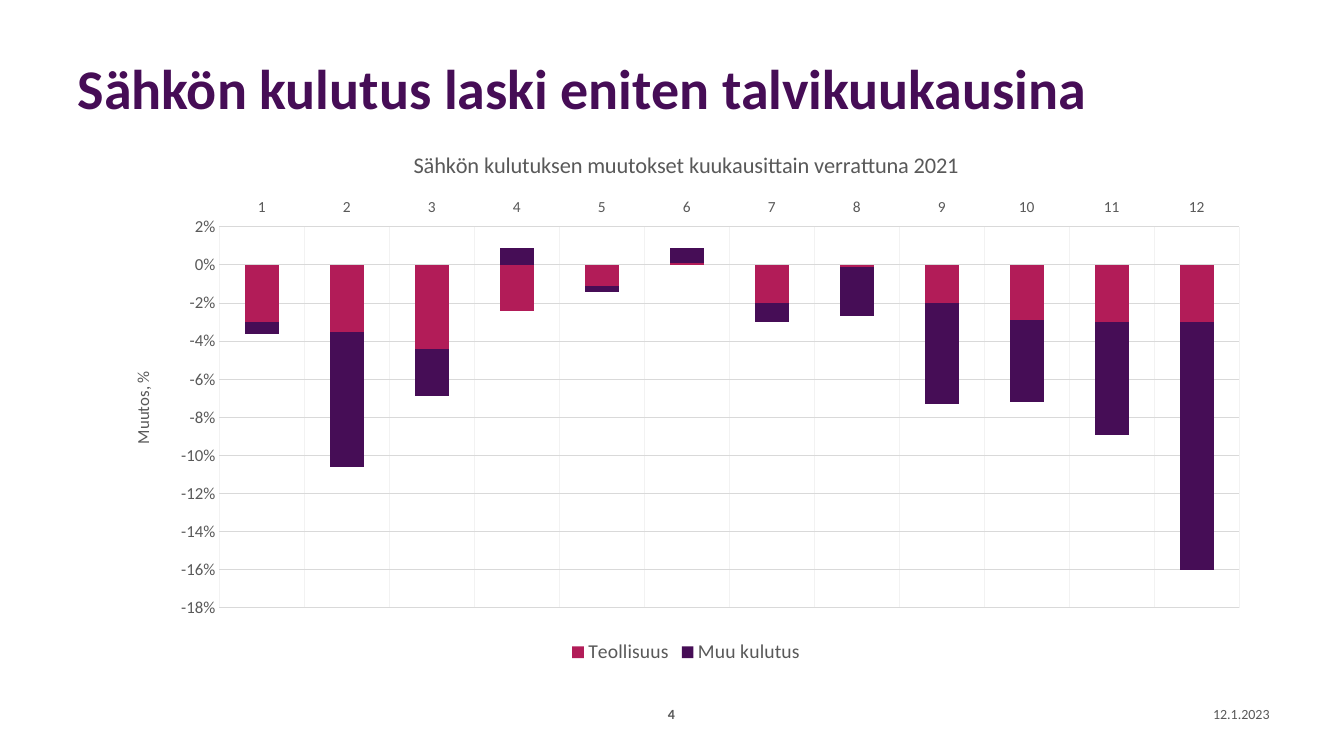
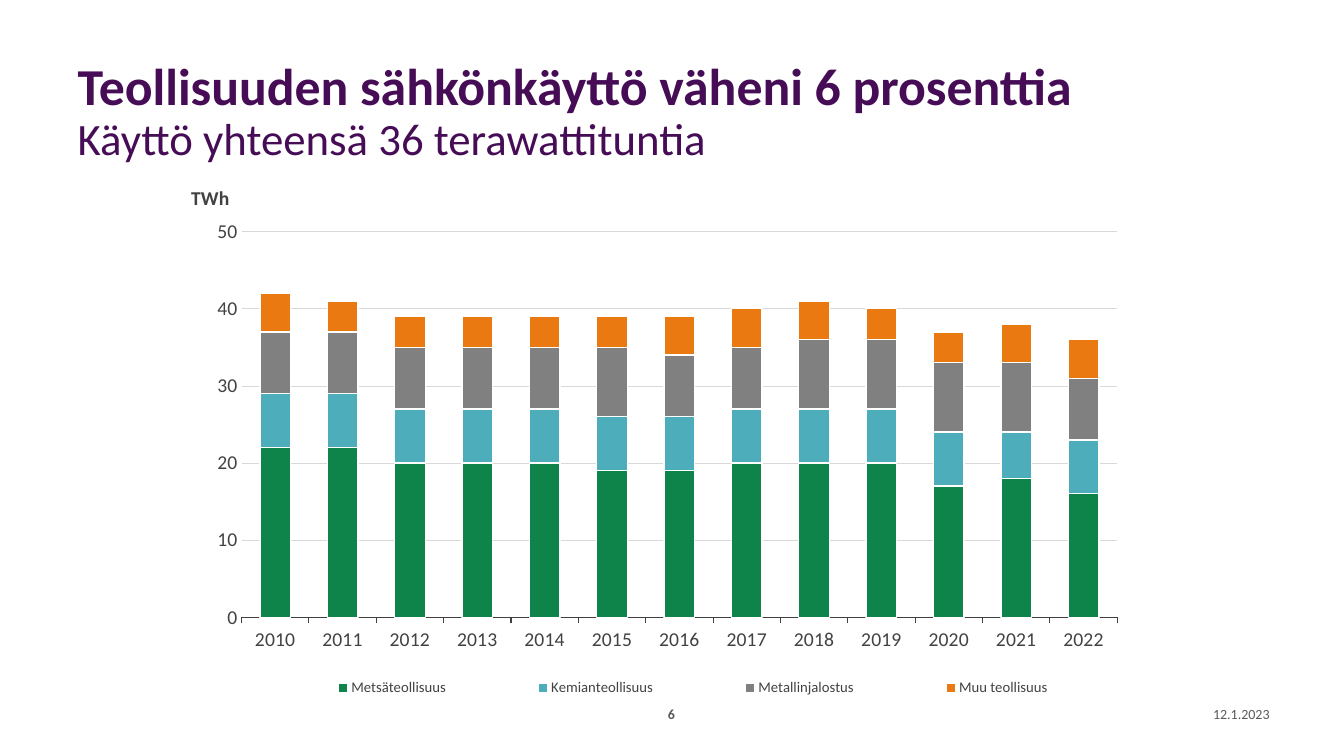
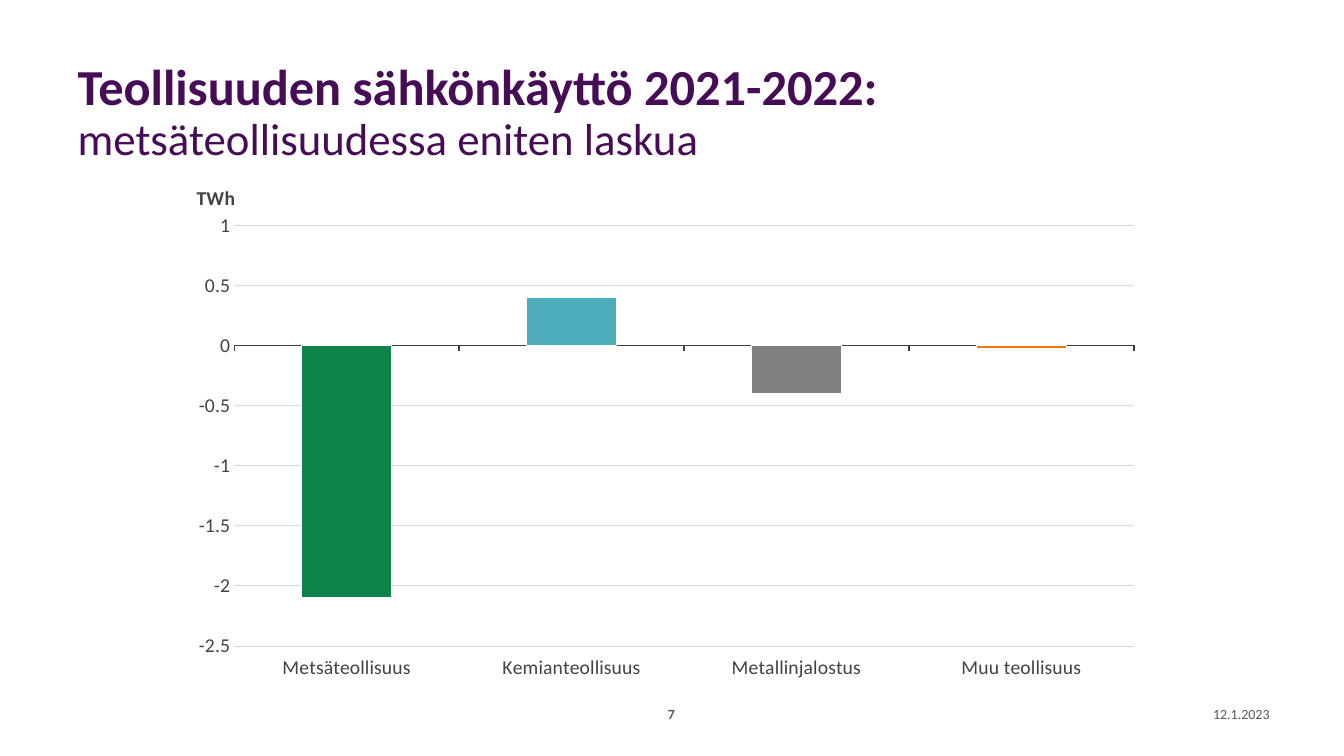
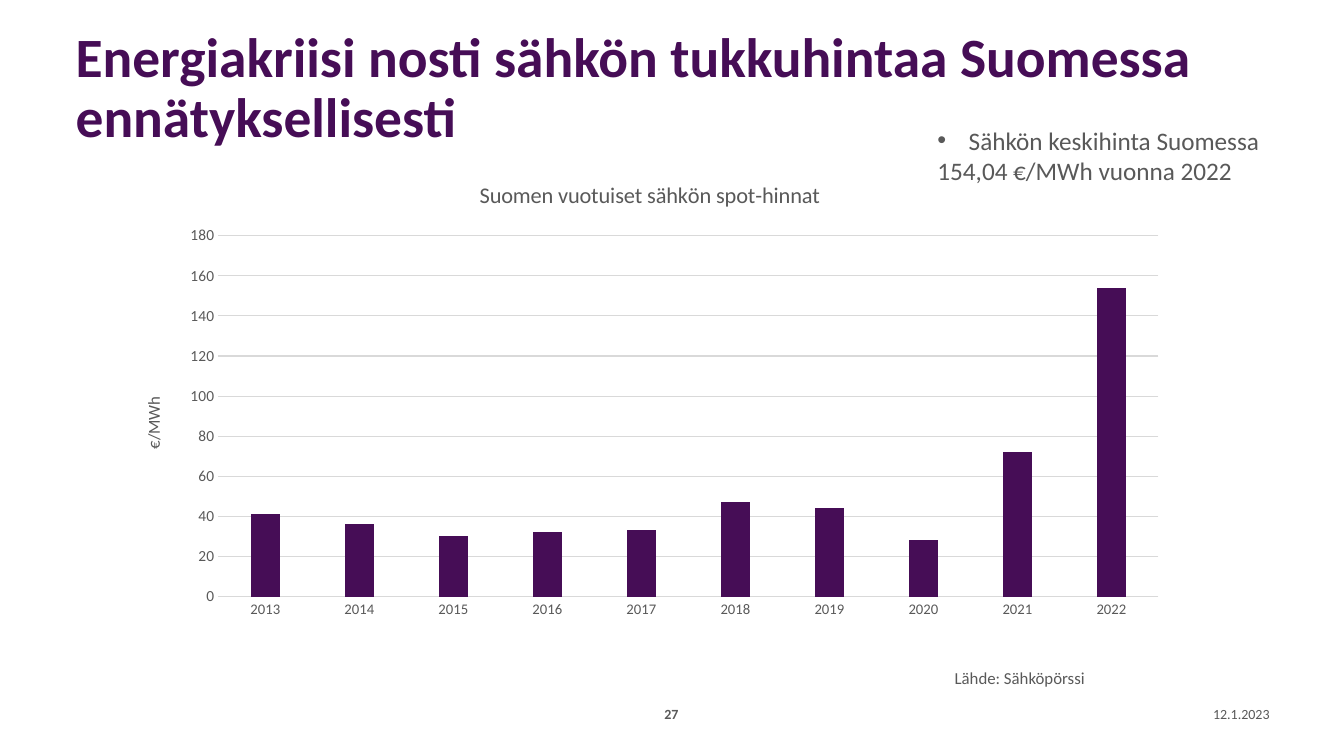
from dataclasses import dataclass, field
from typing import Optional

from lxml import etree
from pptx import Presentation
from pptx import util as u
from pptx.chart import data as chart_data
from pptx.dml.color import RGBColor
from pptx.enum import chart as ch
from pptx.enum import text as t
from pptx.oxml import ns

FONT = "Calibri"
COLORS = {
    "plum": "460D56",
    "raspberry": "B21C58",
    "green": "0F844A",
    "teal": "4EADBB",
    "steel": "808080",
    "orange": "EA7911",
    "gray": "595959",
    "charcoal": "424242",
    "axis": "404040",
    "grid": "D9D9D9",
    "faint": "F2F2F2",
    "white": "FFFFFF",
}
DATE = "12.1.2023"
YEARS = [str(year) for year in range(2010, 2023)]
INDUSTRIES = ["Metsäteollisuus", "Kemianteollisuus", "Metallinjalostus", "Muu teollisuus"]
INDUSTRY_COLORS = ["green", "teal", "steel", "orange"]


@dataclass
class Box:
    left: float
    top: float
    width: float
    height: float

    def inches(self) -> tuple:
        return tuple(u.Inches(v) for v in (self.left, self.top, self.width, self.height))


@dataclass
class Label:
    """A chart or axis title; x and y are fractions of the chart."""
    text: str
    x: float
    y: float
    size: float
    bold: bool = False
    turned: bool = False


@dataclass
class Series:
    name: str
    values: list
    color: str
    point_colors: list = field(default_factory=list)


@dataclass
class Scale:
    low: float
    high: float
    step: float
    number_format: str = "General"


@dataclass
class ColumnChart:
    box: Box
    plot: tuple
    categories: list
    series: list
    scale: Scale
    axis_label: Label
    category_size: float
    value_size: float
    gap: int
    title: Optional[Label] = None
    stacked: bool = False
    outlined: bool = False
    text_color: str = "gray"
    axis_color: str = "grid"
    axis_width: float = 0.75
    grid_width: float = 0.75
    ticks: bool = False
    label_position: ch.XL_TICK_LABEL_POSITION = ch.XL_TICK_LABEL_POSITION.NEXT_TO_AXIS
    category_grid: bool = False
    legend_size: Optional[float] = None
    legend_place: Optional[tuple] = None


@dataclass
class Page:
    number: int
    title: str
    title_box: Box
    title_size: float
    chart: ColumnChart
    subtitle: str = ""


def rgb(name: str) -> RGBColor:
    return RGBColor.from_string(COLORS[name])


def style(font, size: float, color: str, bold: bool = False) -> None:
    font.name = FONT
    font.size = u.Pt(size)
    font.bold = bold
    font.color.rgb = rgb(color)


def draw_line(line, color: str, width: float) -> None:
    line.color.rgb = rgb(color)
    line.width = u.Pt(width)


def add_text(slide, box: Box, lines: list, size: float, bold: bool = False,
             align=t.PP_ALIGN.LEFT, anchor=t.MSO_ANCHOR.TOP):
    frame = slide.shapes.add_textbox(*box.inches()).text_frame
    frame.word_wrap = True
    frame.vertical_anchor = anchor
    frame.text = "\n".join(lines)
    for para in frame.paragraphs:
        para.alignment = align
        for span in para.runs:
            style(span.font, size, "gray", bold)
    return frame


def add_bullet(para, indent: float) -> None:
    properties = para._p.get_or_add_pPr()
    properties.set("marL", str(u.Inches(indent)))
    properties.set("indent", str(-u.Inches(indent)))
    etree.SubElement(properties, ns.qn("a:buFont"), typeface="Arial")
    etree.SubElement(properties, ns.qn("a:buChar"), char="•")


def place(parent, numbers: tuple, inner: bool = False) -> None:
    """Give a chart part a fixed x, y and, if present, width and height."""
    for old in parent.findall(ns.qn("c:layout")):
        parent.remove(old)
    leading = {ns.qn("c:tx"), ns.qn("c:legendPos"), ns.qn("c:legendEntry")}
    layout = etree.Element(ns.qn("c:layout"))
    manual = etree.SubElement(layout, ns.qn("c:manualLayout"))
    settings = [("layoutTarget", "inner")] if inner else []
    settings += [("xMode", "edge"), ("yMode", "edge")]
    settings += [(key, str(number)) for key, number in zip("xywh", numbers)]
    for key, value in settings:
        etree.SubElement(manual, ns.qn(f"c:{key}"), val=value)
    parent.insert(sum(child.tag in leading for child in parent), layout)


def write_label(title, label: Label, color: str) -> None:
    para = title.text_frame.paragraphs[0]
    para.text = label.text
    style(para.runs[0].font, label.size, color, label.bold)
    body = title.element.find(f".//{ns.qn('a:bodyPr')}")
    body.set("rot", "-5400000" if label.turned else "0")
    body.set("vert", "horz")
    place(title.element, (label.x, label.y))


def paint(shape_format, color: str, outlined: bool) -> None:
    shape_format.fill.solid()
    shape_format.fill.fore_color.rgb = rgb(color)
    if outlined:
        draw_line(shape_format.line, "white", 1)


def format_axes(chart, spec: ColumnChart) -> None:
    none, outside = ch.XL_TICK_MARK.NONE, ch.XL_TICK_MARK.OUTSIDE
    category, value = chart.category_axis, chart.value_axis
    for axis, size in ((category, spec.category_size), (value, spec.value_size)):
        axis.major_tick_mark = axis.minor_tick_mark = none
        style(axis.tick_labels.font, size, spec.text_color)

    category.tick_label_position = spec.label_position
    if spec.ticks:
        category.major_tick_mark = outside
    draw_line(category.format.line, spec.axis_color, spec.axis_width)
    category.has_major_gridlines = spec.category_grid
    if spec.category_grid:
        draw_line(category.major_gridlines.format.line, "faint", 0.75)

    value.minimum_scale, value.maximum_scale = spec.scale.low, spec.scale.high
    value.major_unit = spec.scale.step
    value.tick_labels.number_format = spec.scale.number_format
    value.tick_labels.number_format_is_linked = False
    value.format.line.fill.background()
    value.has_major_gridlines = True
    draw_line(value.major_gridlines.format.line, "grid", spec.grid_width)
    value.has_title = True
    write_label(value.axis_title, spec.axis_label, spec.text_color)


def add_column_chart(slide, spec: ColumnChart) -> None:
    data = chart_data.CategoryChartData()
    data.categories = spec.categories
    for item in spec.series:
        data.add_series(item.name, item.values)
    kinds = ch.XL_CHART_TYPE
    kind = kinds.COLUMN_STACKED if spec.stacked else kinds.COLUMN_CLUSTERED
    chart = slide.shapes.add_chart(kind, *spec.box.inches(), data).chart
    style(chart.font, 10, spec.text_color)
    chart.has_title = spec.title is not None
    if spec.title:
        write_label(chart.chart_title, spec.title, spec.text_color)
    format_axes(chart, spec)

    plot = chart.plots[0]
    plot.gap_width = spec.gap
    plot.overlap = 100 if spec.stacked else 0
    plot.vary_by_categories = False
    for series, item in zip(plot.series, spec.series):
        series.invert_if_negative = False
        paint(series.format, item.color, spec.outlined)
        for index, color in enumerate(item.point_colors):
            paint(series.points[index].format, color, spec.outlined)
    place(chart.element.find(f".//{ns.qn('c:plotArea')}"), spec.plot, inner=True)

    chart.has_legend = spec.legend_size is not None
    if spec.legend_size:
        chart.legend.position = ch.XL_LEGEND_POSITION.BOTTOM
        chart.legend.include_in_layout = False
        style(chart.legend.font, spec.legend_size, spec.text_color)
        if spec.legend_place:
            place(chart.element.find(f".//{ns.qn('c:legend')}"), spec.legend_place)


def add_page(deck, page: Page):
    slide = deck.slides.add_slide(deck.slide_layouts[5])
    title = slide.shapes.title
    title.left, title.top, title.width, title.height = page.title_box.inches()
    frame = title.text_frame
    frame.word_wrap = True
    frame.auto_size = t.MSO_AUTO_SIZE.NONE
    frame.vertical_anchor = t.MSO_ANCHOR.MIDDLE
    para = frame.paragraphs[0]
    para.text = f"{page.title}\v{page.subtitle}" if page.subtitle else page.title
    para.alignment = t.PP_ALIGN.LEFT
    para.line_spacing = 0.9
    style(para.runs[0].font, page.title_size, "plum", True)
    for span in para.runs[1:]:
        style(span.font, 32, "plum")

    middle = t.MSO_ANCHOR.MIDDLE
    add_text(slide, Box(11.58, 6.95, 1.11, 0.27), [DATE], 10,
             align=t.PP_ALIGN.RIGHT, anchor=middle)
    add_text(slide, Box(6.36, 6.95, 0.6, 0.27), [str(page.number)], 10, bold=True,
             align=t.PP_ALIGN.CENTER, anchor=middle)
    add_column_chart(slide, page.chart)
    return slide


MONTHLY_CHANGE = ColumnChart(
    box=Box(1.09, 1.29, 11.43, 5.34),
    plot=(0.095, 0.18, 0.885, 0.708),
    categories=[str(month) for month in range(1, 13)],
    series=[
        Series("Teollisuus", [-0.03, -0.035, -0.044, -0.024, -0.011, 0.001,
                              -0.02, -0.001, -0.02, -0.029, -0.03, -0.03], "raspberry"),
        Series("Muu kulutus", [-0.006, -0.071, -0.025, 0.009, -0.003, 0.008,
                               -0.01, -0.026, -0.053, -0.043, -0.059, -0.13], "plum"),
    ],
    scale=Scale(-0.18, 0.02, 0.02, "0%"),
    title=Label("Sähkön kulutuksen muutokset kuukausittain verrattuna 2021", 0.26, 0.03, 16),
    axis_label=Label("Muutos, %", 0.016, 0.442, 12, turned=True),
    category_size=11, value_size=12, gap=150, stacked=True,
    label_position=ch.XL_TICK_LABEL_POSITION.HIGH, category_grid=True, legend_size=14,
)

INDUSTRY_USE = ColumnChart(
    box=Box(1.86, 1.78, 9.4, 5.24),
    plot=(0.057, 0.099, 0.924, 0.73),
    categories=YEARS,
    series=[Series(*item) for item in zip(INDUSTRIES, [
        [22, 22, 20, 20, 20, 19, 19, 20, 20, 20, 17, 18, 16],
        [7, 7, 7, 7, 7, 7, 7, 7, 7, 7, 7, 6, 7],
        [8, 8, 8, 8, 8, 9, 8, 8, 9, 9, 9, 9, 8],
        [5, 4, 4, 4, 4, 4, 5, 5, 5, 4, 4, 5, 5],
    ], INDUSTRY_COLORS)],
    scale=Scale(0, 50, 10, "0"),
    axis_label=Label("TWh", 0, 0.002, 14, bold=True),
    category_size=14, value_size=14, gap=120, stacked=True, outlined=True,
    text_color="charcoal", axis_color="axis", grid_width=0.5, ticks=True,
    legend_size=10.5, legend_place=(0.067, 0.938, 0.939, 0.05),
)

INDUSTRY_CHANGE = ColumnChart(
    box=Box(1.72, 1.78, 9.72, 5.01),
    plot=(0.062, 0.091, 0.918, 0.833),
    categories=INDUSTRIES,
    series=[Series("Series 1", [-2.1, 0.4, -0.4, -0.03], "orange", INDUSTRY_COLORS[:3])],
    scale=Scale(-2.5, 1, 0.5),
    axis_label=Label("TWh", 0.02, 0.002, 14, bold=True),
    category_size=14, value_size=14, gap=150, outlined=True,
    text_color="charcoal", axis_color="axis", axis_width=1, grid_width=0.5, ticks=True,
    label_position=ch.XL_TICK_LABEL_POSITION.LOW,
)

SPOT_PRICES = ColumnChart(
    box=Box(1.2, 1.6, 10.5, 4.62),
    plot=(0.092, 0.16, 0.888, 0.775),
    categories=YEARS[3:],
    series=[Series("Series 1", [41, 36, 30, 32, 33, 47, 44, 28, 72, 154], "plum")],
    scale=Scale(0, 180, 20),
    title=Label("Suomen vuotuiset sähkön spot-hinnat", 0.335, 0.031, 16),
    axis_label=Label("€/MWh", 0.017, 0.498, 12, turned=True),
    category_size=10.5, value_size=11, gap=219,
)

TWO_LINE_TITLE = Box(0.67, 0.4, 10.37, 1.45)
PAGES = [
    Page(4, "Sähkön kulutus laski eniten talvikuukausina",
         Box(0.67, 0.4, 10.72, 1.01), 40, MONTHLY_CHANGE),
    Page(6, "Teollisuuden sähkönkäyttö väheni 6 prosenttia", TWO_LINE_TITLE, 37,
         INDUSTRY_USE, "Käyttö yhteensä 36 terawattituntia"),
    Page(7, "Teollisuuden sähkönkäyttö 2021-2022:", TWO_LINE_TITLE, 36,
         INDUSTRY_CHANGE, "metsäteollisuudessa eniten laskua"),
    Page(27, "Energiakriisi nosti sähkön tukkuhintaa Suomessa ennätyksellisesti",
         Box(0.65, 0.16, 12.02, 1.45), 39.6, SPOT_PRICES),
]


def main() -> None:
    deck = Presentation()
    deck.slide_width, deck.slide_height = u.Inches(13.33), u.Inches(7.5)
    slides = [add_page(deck, page) for page in PAGES]

    price_slide = slides[-1]
    add_text(price_slide, Box(9.37, 6.58, 1.98, 0.3), ["Lähde: Sähköpörssi"], 12)
    average = add_text(price_slide, Box(9.2, 1.19, 3.47, 0.71),
                       ["Sähkön keskihinta Suomessa", "154,04 €/MWh vuonna 2022"], 18)
    add_bullet(average.paragraphs[0], 0.31)
    deck.save("out.pptx")


if __name__ == "__main__":
    main()
